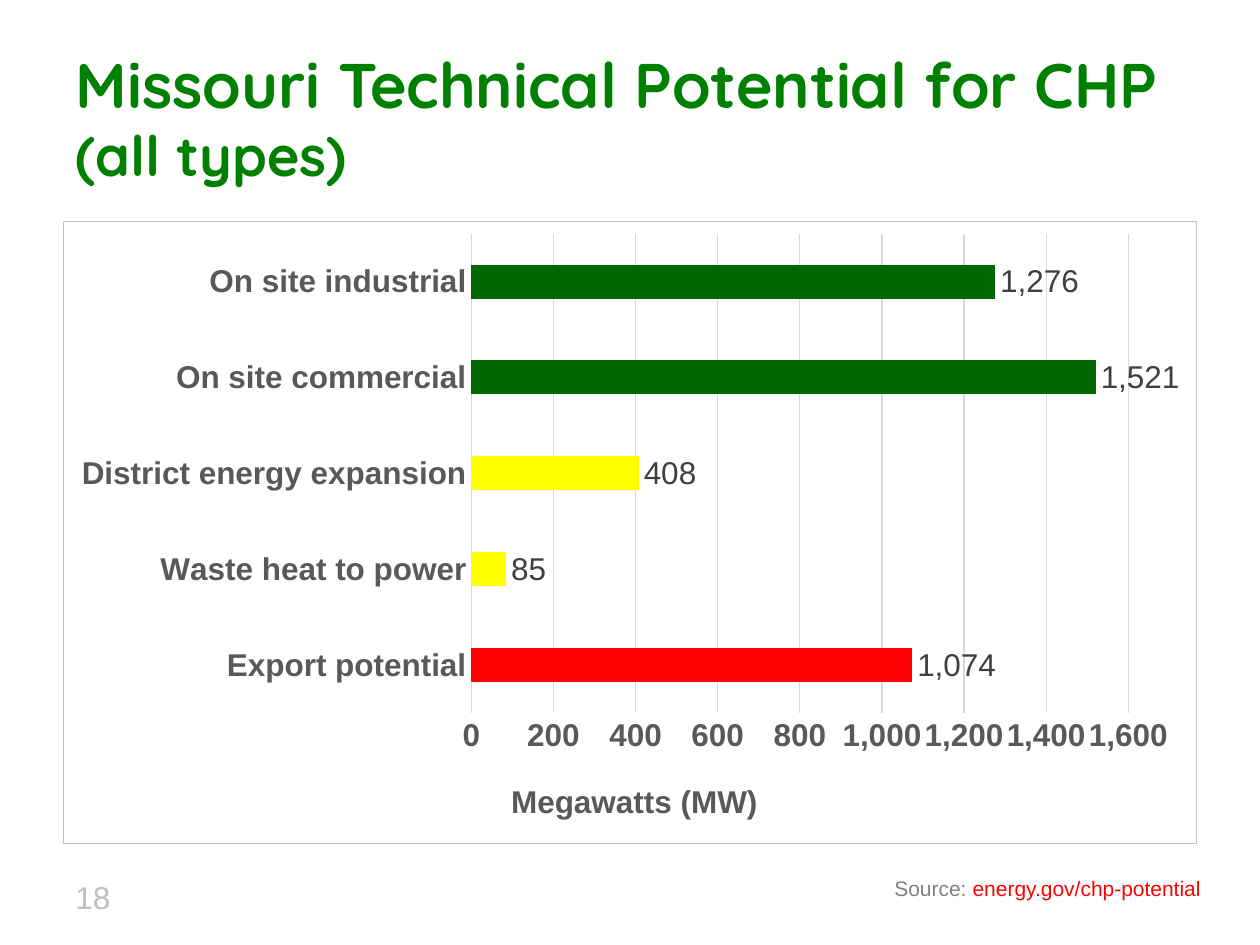
from dataclasses import dataclass

from lxml import etree
from pptx import Presentation
from pptx import util as u
from pptx.chart import data as chart_data
from pptx.chart.chart import Chart
from pptx.dml.color import RGBColor
from pptx.enum import chart as ch
from pptx.enum import text as tx
from pptx.oxml import parse_xml
from pptx.oxml.ns import nsdecls, qn
from pptx.text.text import Font, TextFrame

TITLE_GREEN = RGBColor(0x00, 0x80, 0x00)
BAR_GREEN = RGBColor(0x00, 0x66, 0x00)
YELLOW = RGBColor(0xFF, 0xFF, 0x00)
RED = RGBColor(0xFF, 0x00, 0x00)
AXIS_GRAY = RGBColor(0x59, 0x59, 0x59)
LABEL_GRAY = RGBColor(0x40, 0x40, 0x40)
SOURCE_GRAY = RGBColor(0x80, 0x80, 0x80)
NUMBER_GRAY = RGBColor(0xBF, 0xBF, 0xBF)
GRID_GRAY = RGBColor(0xD9, 0xD9, 0xD9)
BORDER_GRAY = RGBColor(0xC0, 0xC0, 0xC0)
BLACK = RGBColor(0x00, 0x00, 0x00)

MARGIN = u.Cm(1.27)
CONTENT_WIDTH = u.Cm(22.86)


@dataclass(frozen=True)
class Potential:
    category: str
    megawatts: int
    color: RGBColor


@dataclass(frozen=True)
class Piece:
    words: str
    size: int
    color: RGBColor
    breaks_before: bool = False


POTENTIALS = [
    Potential("Export potential", 1074, RED),
    Potential("Waste heat to power", 85, YELLOW),
    Potential("District energy expansion", 408, YELLOW),
    Potential("On site commercial", 1521, BAR_GREEN),
    Potential("On site industrial", 1276, BAR_GREEN),
]


def set_font(font: Font, size: int, color: RGBColor, bold: bool = False,
             face: str = "Arial") -> None:
    font.size = u.Pt(size)
    font.name = face
    font.bold = bold
    font.color.rgb = color


def write_text(frame: TextFrame, pieces: list[Piece], *, face: str = "Arial",
               bold: bool = False, wrap: bool = True,
               anchor: tx.MSO_ANCHOR = tx.MSO_ANCHOR.TOP,
               fit: tx.MSO_AUTO_SIZE = tx.MSO_AUTO_SIZE.NONE) -> None:
    frame.word_wrap = wrap
    frame.auto_size = fit
    frame.vertical_anchor = anchor
    paragraph = frame.paragraphs[0]
    paragraph.alignment = tx.PP_ALIGN.LEFT
    for piece in pieces:
        if piece.breaks_before:
            paragraph.add_line_break()
        run = paragraph.add_run()
        run.text = piece.words
        set_font(run.font, piece.size, piece.color, bold, face)


def place_manually(parent: etree._Element, **fractions: float) -> None:
    for old in parent.findall(qn("c:layout")):
        parent.remove(old)
    target = '<c:layoutTarget val="inner"/>' if "w" in fractions else ""
    modes = "".join(f'<c:{side}Mode val="edge"/>' for side in "xy")
    values = "".join(f'<c:{side} val="{value}"/>' for side, value in fractions.items())
    layout = parse_xml(
        f'<c:layout {nsdecls("c")}><c:manualLayout>{target}{modes}{values}'
        "</c:manualLayout></c:layout>"
    )
    text_part = parent.find(qn("c:tx"))
    if text_part is None:
        parent.insert(0, layout)
    else:
        text_part.addnext(layout)


def frame_chart(chart: Chart) -> None:
    border = parse_xml(
        f'<c:spPr {nsdecls("c", "a")}><a:noFill/><a:ln w="{u.Pt(0.75)}">'
        f'<a:solidFill><a:srgbClr val="{BORDER_GRAY}"/></a:solidFill></a:ln></c:spPr>'
    )
    chart.element.find(qn("c:chart")).addnext(border)


def format_axes(chart: Chart) -> None:
    for axis in (chart.category_axis, chart.value_axis):
        axis.major_tick_mark = ch.XL_TICK_MARK.NONE
        axis.minor_tick_mark = ch.XL_TICK_MARK.NONE
        set_font(axis.tick_labels.font, 18, AXIS_GRAY, bold=True)

    categories, megawatts = chart.category_axis, chart.value_axis
    categories.has_major_gridlines = False
    megawatts.has_major_gridlines = True
    for line in (categories.format.line, megawatts.major_gridlines.format.line):
        line.color.rgb = GRID_GRAY
        line.width = u.Pt(0.75)
    megawatts.format.line.fill.background()
    megawatts.minimum_scale = 0
    megawatts.maximum_scale = 1600
    megawatts.major_unit = 200
    megawatts.tick_labels.number_format = "#,##0"
    megawatts.tick_labels.number_format_is_linked = False

    heading = megawatts.axis_title.text_frame.paragraphs[0].add_run()
    heading.text = "Megawatts (MW)"
    set_font(heading.font, 18, AXIS_GRAY, bold=True)
    place_manually(megawatts.axis_title._element, x=0.39, y=0.89)


def format_bars(chart: Chart) -> None:
    plot = chart.plots[0]
    plot.gap_width = 182
    plot.vary_by_categories = False
    series = plot.series[0]
    series.invert_if_negative = False
    series.format.fill.solid()
    series.format.fill.fore_color.rgb = BAR_GREEN
    for index, potential in enumerate(POTENTIALS):
        if potential.color != BAR_GREEN:
            fill = series.points[index].format.fill
            fill.solid()
            fill.fore_color.rgb = potential.color

    labels = series.data_labels
    labels.show_value = True
    labels.position = ch.XL_LABEL_POSITION.OUTSIDE_END
    labels.number_format = "#,##0"
    labels.number_format_is_linked = False
    set_font(labels.font, 18, LABEL_GRAY)


def main() -> None:
    deck = Presentation()
    deck.slide_width, deck.slide_height = u.Cm(25.4), u.Cm(19.05)
    slide = deck.slides.add_slide(deck.slide_layouts[5])

    title = slide.shapes.title
    title.left, title.top = MARGIN, u.Cm(0.76)
    title.width, title.height = CONTENT_WIDTH, u.Cm(3.18)
    write_text(title.text_frame,
               [Piece("Missouri Technical Potential for CHP ", 36, TITLE_GREEN),
                Piece("(all types)", 32, TITLE_GREEN, breaks_before=True)],
               face="Quicksand", bold=True, anchor=tx.MSO_ANCHOR.MIDDLE)

    table = chart_data.CategoryChartData(number_format="#,##0")
    table.categories = [potential.category for potential in POTENTIALS]
    table.add_series("Series 1", [potential.megawatts for potential in POTENTIALS])
    chart = slide.shapes.add_chart(ch.XL_CHART_TYPE.BAR_CLUSTERED, MARGIN, u.Cm(4.45),
                                   CONTENT_WIDTH, u.Cm(12.57), table).chart
    chart.has_legend = False
    chart.has_title = False
    set_font(chart.font, 18, BLACK)
    format_axes(chart)
    format_bars(chart)
    frame_chart(chart)
    plot_area = chart.element.find(qn("c:chart")).find(qn("c:plotArea"))
    place_manually(plot_area, x=0.36, y=0.02, w=0.58, h=0.77)

    page_number = slide.shapes.add_textbox(MARGIN, u.Cm(17.58), u.Cm(5.92), u.Cm(1.02))
    write_text(page_number.text_frame, [Piece("18", 18, NUMBER_GRAY)])

    source = slide.shapes.add_textbox(u.Cm(17.78), u.Cm(17.53), u.Cm(6.99), u.Cm(0.76))
    write_text(source.text_frame,
               [Piece("Source: ", 12, SOURCE_GRAY),
                Piece("energy.gov/chp-potential", 12, RED)],
               wrap=False, fit=tx.MSO_AUTO_SIZE.SHAPE_TO_FIT_TEXT)

    deck.save("out.pptx")


if __name__ == "__main__":
    main()
